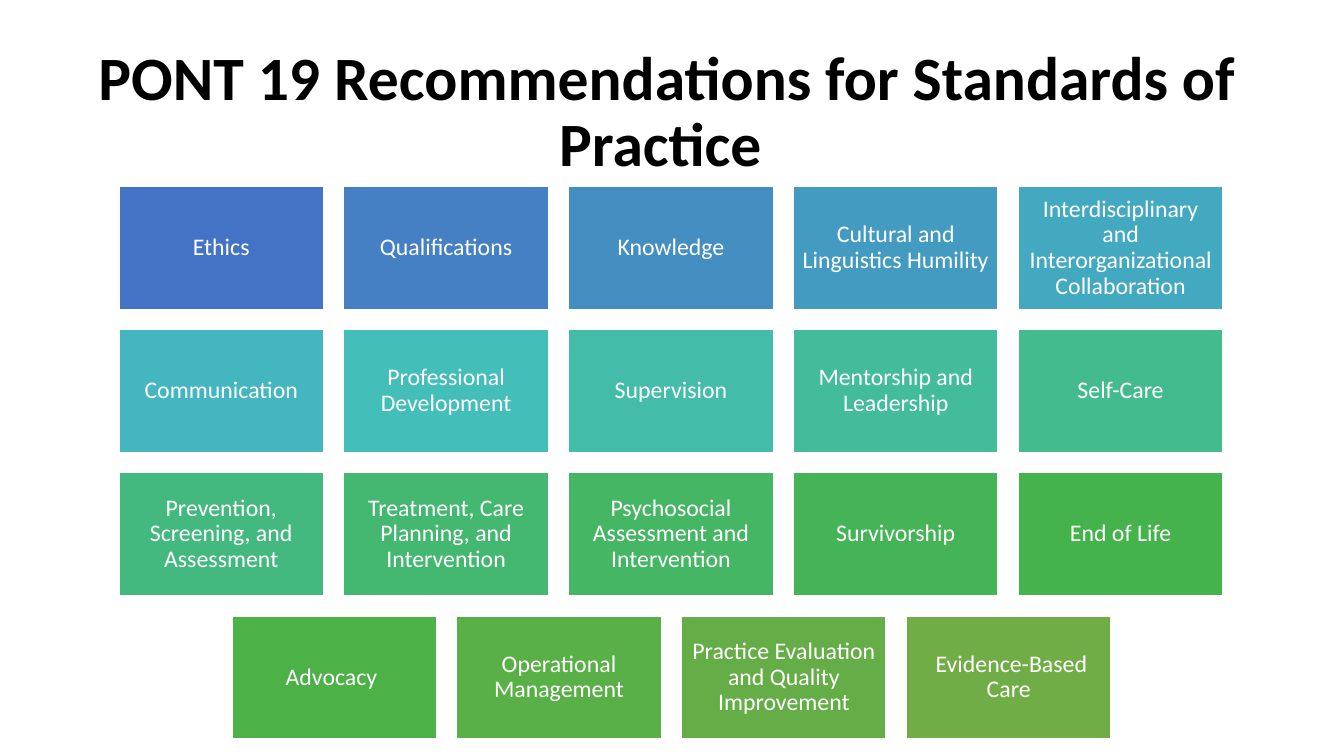
from dataclasses import dataclass

import pptx
import pptx.dml.color
import pptx.enum.shapes
import pptx.enum.text
import pptx.util

SCALE = 9144
COLS = 5
LEFT, TOP = 118, 185
WIDE, HIGH = 203, 122
STEP, DROP = 223, 142


@dataclass
class Card:
    text: str
    fill: str


CARDS = [
    Card("Ethics", "4472C4"),
    Card("Qualifications", "4480C3"),
    Card("Knowledge", "448EC2"),
    Card("Cultural and Linguistics Humility", "449BC1"),
    Card("Interdisciplinary and Interorganizational Collaboration", "43A9C0"),
    Card("Communication", "43B6BF"),
    Card("Professional Development", "43BEB9"),
    Card("Supervision", "43BDAA"),
    Card("Mentorship and Leadership", "43BC9C"),
    Card("Self-Care", "43BB8D"),
    Card("Prevention, Screening, and Assessment", "44B97F"),
    Card("Treatment, Care Planning, and Intervention", "44B871"),
    Card("Psychosocial Assessment and Intervention", "45B664"),
    Card("Survivorship", "45B457"),
    Card("End of Life", "45B34B"),
    Card("Advocacy ", "4CB146"),
    Card("Operational Management", "59B046"),
    Card("Practice Evaluation and Quality Improvement", "65AE47"),
    Card(" Evidence-Based Care", "70AD47"),
]


def px(size: int) -> pptx.util.Emu:
    return pptx.util.Emu(size * SCALE)


def tint(code: str) -> pptx.dml.color.RGBColor:
    return pptx.dml.color.RGBColor.from_string(code)


def write(shape, text: str, size: int, color: str, bold: bool = False) -> None:
    frame = shape.text_frame
    frame.word_wrap = True
    frame.vertical_anchor = pptx.enum.text.MSO_ANCHOR.MIDDLE
    frame.text = text
    line = frame.paragraphs[0]
    line.alignment = pptx.enum.text.PP_ALIGN.CENTER
    line.line_spacing = 0.9
    font = line.runs[0].font
    font.name = "Calibri"
    font.size = pptx.util.Pt(size)
    font.bold = bold
    font.color.rgb = tint(color)


def draw(slide, card: Card, left: int, top: int) -> None:
    box = slide.shapes.add_shape(
        pptx.enum.shapes.MSO_SHAPE.RECTANGLE,
        px(left), px(top), px(WIDE), px(HIGH))
    box.shadow.inherit = False
    box.fill.solid()
    box.fill.fore_color.rgb = tint(card.fill)
    box.line.color.rgb = tint("FFFFFF")
    box.line.width = pptx.util.Pt(1)
    frame = box.text_frame
    frame.margin_left = frame.margin_right = px(7)
    frame.margin_top = frame.margin_bottom = px(7)
    write(box, card.text, 17, "FFFFFF")


def main() -> None:
    deck = pptx.Presentation()
    deck.slide_width, deck.slide_height = px(1333), px(750)
    slide = deck.slides.add_slide(deck.slide_layouts[6])
    title = slide.shapes.add_textbox(px(0), px(40), px(1324), px(145))
    write(title, "PONT 19 Recommendations for Standards of Practice ",
          44, "000000", True)
    for start in range(0, len(CARDS), COLS):
        row = CARDS[start:start + COLS]
        left = LEFT + round((COLS - len(row)) * STEP / 2)
        top = TOP + start // COLS * DROP
        for col, card in enumerate(row):
            draw(slide, card, left + col * STEP, top)
    deck.save("out.pptx")


if __name__ == "__main__":
    main()
